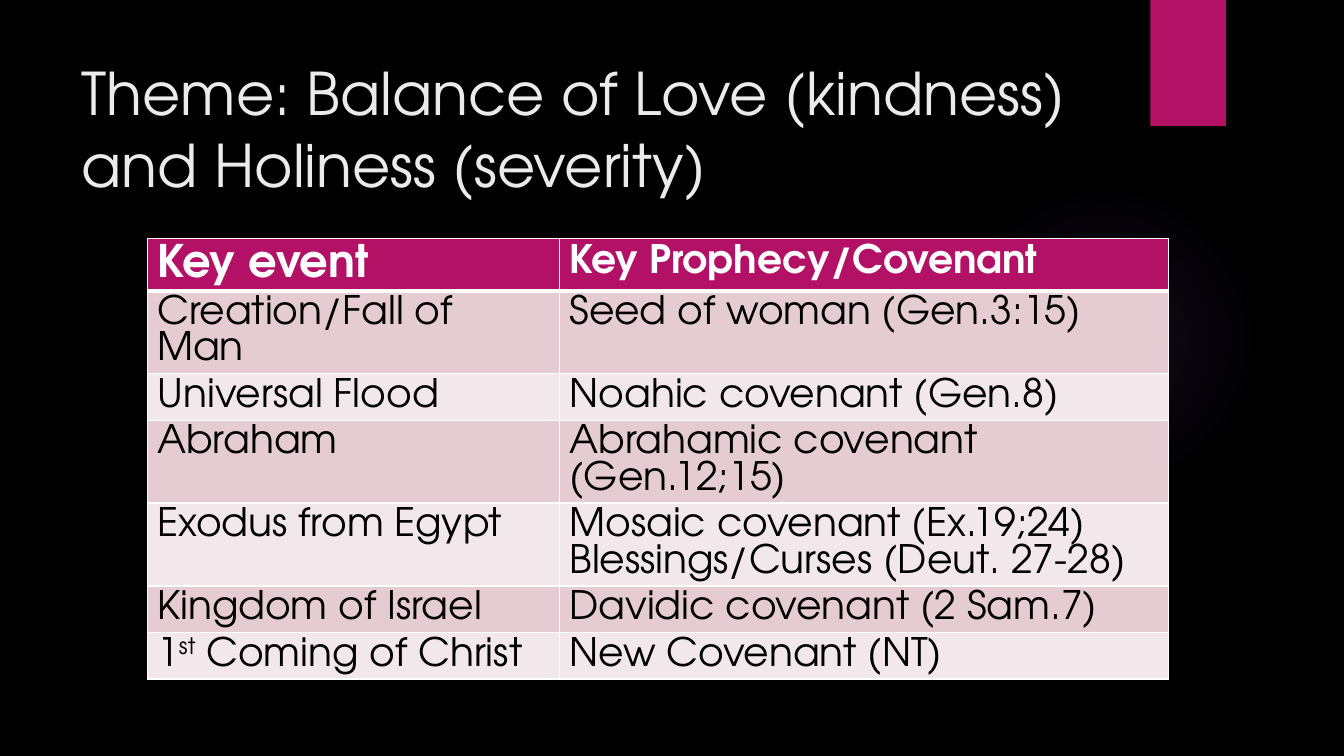
from lxml import etree
from pptx import Presentation
from pptx.dml.color import RGBColor
from pptx.enum.shapes import MSO_SHAPE
from pptx.enum.text import MSO_ANCHOR, MSO_AUTO_SIZE, PP_ALIGN
from pptx.oxml.ns import qn
from pptx.util import Inches, Pt

RECTANGLE = MSO_SHAPE.RECTANGLE
OVAL = MSO_SHAPE.OVAL
MIDDLE = MSO_ANCHOR.MIDDLE
NO_AUTOFIT = MSO_AUTO_SIZE.NONE
LEFT = PP_ALIGN.LEFT

FONT = "TeX Gyre Adventor"
BLACK, WHITE, OFF_WHITE = "000000", "FFFFFF", "EBEBEB"
MAGENTA, VIOLET = "B31166", "9B6BF2"
BANDS = ("F2E7EA", "E5CCD3")
TITLE_LEADING, TABLE_LEADING = 1.22, 0.93

HEADINGS = (("Key event", 32), ("Key Prophecy/Covenant", 28))
EVENTS = (
    ("Creation/Fall of Man", "Seed of woman (Gen.3:15)"),
    ("Universal Flood", "Noahic covenant (Gen.8)"),
    ("Abraham", "Abrahamic covenant (Gen.12;15)"),
    ("Exodus from Egypt", "Mosaic covenant (Ex.19;24)\nBlessings/Curses (Deut. 27-28)"),
    ("Kingdom of Israel", "Davidic covenant (2 Sam.7)"),
    (("1", "st", " Coming of Christ"), "New Covenant (NT)"),
)


def rgb(code):
    return RGBColor.from_string(code)


class Deck:
    def __init__(self):
        self.presentation = Presentation()
        self.presentation.slide_width = Inches(13.33)
        self.presentation.slide_height = Inches(7.5)
        self.slide = self.presentation.slides.add_slide(self.presentation.slide_layouts[5])
        background = self.slide.background.fill
        background.solid()
        background.fore_color.rgb = rgb(BLACK)

    def across(self, percent):
        return round(self.presentation.slide_width * percent / 100)

    def down(self, percent):
        return round(self.presentation.slide_height * percent / 100)

    def box(self, left, top, width, height):
        return self.across(left), self.down(top), self.across(width), self.down(height)

    def style(self, frame, size, color, leading, bold=False):
        for paragraph in frame.paragraphs:
            paragraph.alignment = LEFT
            paragraph.line_spacing = Pt(round(size * leading, 1))
            for run in paragraph.runs:
                run.font.name = FONT
                run.font.size = Pt(size)
                run.font.bold = bold
                run.font.color.rgb = rgb(color)

    def shape(self, kind, place, color):
        figure = self.slide.shapes.add_shape(kind, *self.box(*place))
        figure.shadow.inherit = False
        figure.fill.solid()
        figure.fill.fore_color.rgb = rgb(color)
        figure.line.fill.background()
        return figure

    def glow(self, place, color, stops):
        halo = self.shape(OVAL, place, color)
        properties = halo.fill._xPr
        solid = properties.find(qn("a:solidFill"))
        gradient = etree.Element(qn("a:gradFill"), rotWithShape="1")
        stop_list = etree.SubElement(gradient, qn("a:gsLst"))
        for position, opacity in stops:
            stop = etree.SubElement(stop_list, qn("a:gs"), pos=str(position * 1000))
            tint = etree.SubElement(stop, qn("a:srgbClr"), val=color)
            etree.SubElement(tint, qn("a:alpha"), val=str(opacity * 1000))
        circle = etree.SubElement(gradient, qn("a:path"), path="circle")
        etree.SubElement(circle, qn("a:fillToRect"), l="50000", t="50000", r="50000", b="50000")
        properties.replace(solid, gradient)

    def title(self, wording, place, size):
        heading = self.slide.shapes.title
        heading.left, heading.top, heading.width, heading.height = self.box(*place)
        frame = heading.text_frame
        frame.text = wording
        frame.word_wrap = True
        frame.auto_size = NO_AUTOFIT
        frame.vertical_anchor = MIDDLE
        self.style(frame, size, OFF_WHITE, TITLE_LEADING)

    def borders(self, cell, bottom):
        properties = cell._tc.get_or_add_tcPr()
        widths = {"lnL": 1, "lnR": 1, "lnT": 1, "lnB": bottom}
        for index, (side, width) in enumerate(widths.items()):
            line = etree.Element(qn("a:" + side), w=str(Pt(width)))
            fill = etree.SubElement(line, qn("a:solidFill"))
            etree.SubElement(fill, qn("a:srgbClr"), val=WHITE)
            properties.insert(index, line)

    def cell(self, cell, wording, size, color, fill, bold=False, bottom=1):
        frame = cell.text_frame
        if isinstance(wording, str):
            frame.text = wording
        else:
            for part in wording:
                frame.paragraphs[0].add_run().text = part
            ordinal = frame.paragraphs[0].runs[1]
            ordinal._r.get_or_add_rPr().set("baseline", "30000")
        self.style(frame, size, color, TABLE_LEADING, bold)
        cell.fill.solid()
        cell.fill.fore_color.rgb = rgb(fill)
        self.borders(cell, bottom)

    def table(self, left, top, widths, row_height, headings, rows):
        count = len(rows) + 1
        place = self.box(left, top, sum(widths), row_height * count)
        grid = self.slide.shapes.add_table(count, len(widths), *place).table
        for column, width in zip(grid.columns, widths):
            column.width = self.across(width)
        for index, (heading, size) in enumerate(headings):
            self.cell(grid.cell(0, index), heading, size, WHITE, MAGENTA, True, 3)
        for number, row in enumerate(rows, 1):
            for index, wording in enumerate(row):
                self.cell(grid.cell(number, index), wording, 28, BLACK, BANDS[number % 2])


def main():
    deck = Deck()
    deck.glow((70.59, 24.4, 23.1, 41.07), VIOLET, ((0, 7), (36, 6), (69, 0)))
    deck.shape(RECTANGLE, (85.6, 0, 5.63, 16.67), MAGENTA)
    deck.title("Theme: Balance of Love (kindness) and Holiness (severity)",
               (5.33, 6.67, 77.19, 20.4), 42)
    deck.table(10.95, 31.6, (30.68, 45.31), 5.47, HEADINGS, EVENTS)
    deck.presentation.save("out.pptx")


if __name__ == "__main__":
    main()
